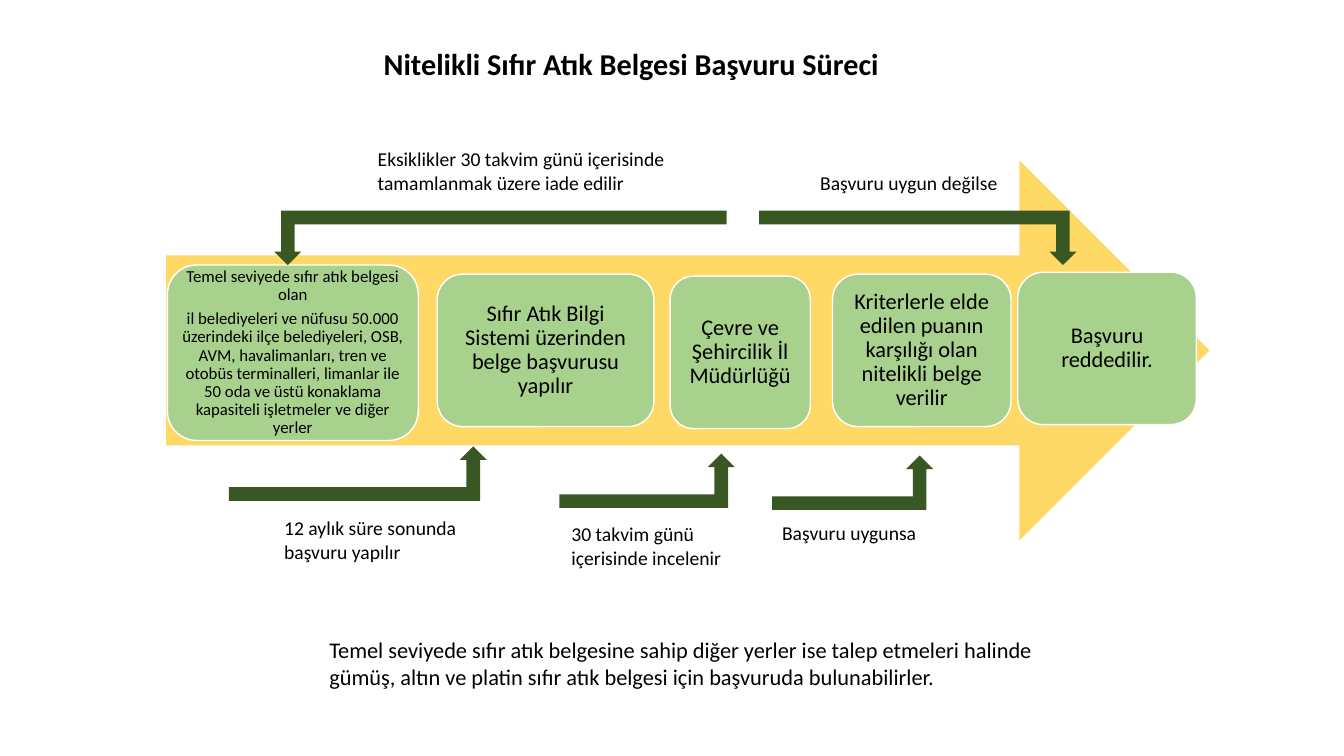
from pptx import Presentation
from pptx.dml.color import RGBColor
from pptx.enum.shapes import MSO_SHAPE
from pptx.enum.text import MSO_ANCHOR, PP_ALIGN
from pptx.util import Cm, Pt

COLORS = {"band": "FFD966", "step": "A9D18E", "arrow": "385723",
          "outline": "FFFFFF", "text": "000000"}

deck = Presentation()
deck.slide_width, deck.slide_height = Cm(33.87), Cm(19.05)
page = deck.slides.add_slide(deck.slide_layouts[6])


def add_filled(kind, left, top, width, height, color):
    shape = page.shapes.add_shape(kind, Cm(left), Cm(top), Cm(width), Cm(height))
    shape.shadow.inherit = False
    shape.fill.solid()
    shape.fill.fore_color.rgb = RGBColor.from_string(COLORS[color])
    shape.line.fill.background()
    return shape


def write(shape, text, size, bold=False):
    frame = shape.text_frame
    frame.word_wrap = True
    frame.text = text
    for para in frame.paragraphs:
        for span in para.runs:
            span.font.name = "Calibri"
            span.font.size = Pt(size)
            span.font.bold = bold
            span.font.color.rgb = RGBColor.from_string(COLORS["text"])
    return frame


# Title, arrow labels and closing note: left, top, width, height, size, text
texts = [
    (9.42, 1.19, 14, 0.91, 21.6, "Nitelikli Sıfır Atık Belgesi Başvuru Süreci"),
    (9.27, 3.58, 8.1, 1.45, 14,
     "Eksiklikler 30 takvim günü içerisinde tamamlanmak üzere iade edilir"),
    (20.42, 4.19, 5.03, 0.86, 14, "Başvuru uygun değilse"),
    (6.91, 12.88, 5.03, 1.45, 14, "12 aylık süre sonunda başvuru yapılır"),
    (14.15, 13.03, 5.03, 1.45, 14, "30 takvim günü içerisinde incelenir"),
    (19.46, 13, 4.37, 0.86, 14, "Başvuru uygunsa"),
    (8.05, 15.9, 18.59, 1.63, 16,
     "Temel seviyede sıfır atık belgesine sahip diğer yerler ise talep etmeleri "
     "halinde gümüş, altın ve platin sıfır atık belgesi için başvuruda bulunabilirler."),
]

# Broad arrow behind the steps
add_filled(MSO_SHAPE.RIGHT_ARROW, 4.19, 4.04, 26.29, 9.58, "band")

# Process steps: left, top, width, height, size, margin, text
steps = [
    (4.22, 6.68, 6.32, 4.42, 12, 0.12,
     "Temel seviyede sıfır atık belgesi olan\n"
     "il belediyeleri ve nüfusu 50.000 üzerindeki ilçe belediyeleri, OSB, AVM, "
     "havalimanları, tren ve otobüs terminalleri, limanlar ile 50 oda ve üstü "
     "konaklama kapasiteli işletmeler ve diğer yerler"),
    (11.02, 6.91, 5.46, 3.84, 16, 0.17,
     "Sıfır Atık Bilgi Sistemi üzerinden belge başvurusu yapılır"),
    (16.89, 6.96, 3.53, 3.84, 16, 0.17, "Çevre ve Şehircilik İl Müdürlüğü"),
    (20.98, 6.91, 4.5, 3.84, 16, 0.17,
     "Kriterlerle elde edilen puanın karşılığı olan nitelikli belge verilir"),
    (25.65, 6.86, 4.5, 3.84, 16, 0.17, "Başvuru reddedilir."),
]
for left, top, width, height, size, margin, text in steps:
    box = add_filled(MSO_SHAPE.ROUNDED_RECTANGLE, left, top, width, height, "step")
    box.line.color.rgb = RGBColor.from_string(COLORS["outline"])
    box.line.width = Pt(1)
    frame = write(box, text, size)
    frame.vertical_anchor = MSO_ANCHOR.MIDDLE
    frame.margin_left = frame.margin_right = Cm(margin)
    frame.margin_top = frame.margin_bottom = Cm(margin)
    for para in frame.paragraphs:
        para.alignment = PP_ALIGN.CENTER
        para.line_spacing = 0.9
        para.space_after = Pt(0.35 * size)

# Bent arrows: left, top, width, rotation, mirrored
bends = [
    (6.91, 5.31, 11.4, 180, False),
    (19.13, 5.31, 8, 180, True),
    (5.77, 11.25, 6.5, 0, False),
    (14.1, 11.43, 4.42, 0, False),
    (19.46, 11.48, 4.06, 0, False),
]
for left, top, width, rotation, mirrored in bends:
    bend = add_filled(MSO_SHAPE.BENT_UP_ARROW, left, top, width, 1.37, "arrow")
    bend.rotation = rotation
    if mirrored:
        bend._element.spPr.xfrm.set("flipH", "1")

# Free texts, the title in bold
for left, top, width, height, size, text in texts:
    label = page.shapes.add_textbox(Cm(left), Cm(top), Cm(width), Cm(height))
    is_title = size > 16
    frame = write(label, text, size, bold=is_title)
    if is_title:
        frame.vertical_anchor = MSO_ANCHOR.MIDDLE
        frame.paragraphs[0].line_spacing = 0.9

deck.save("out.pptx")
